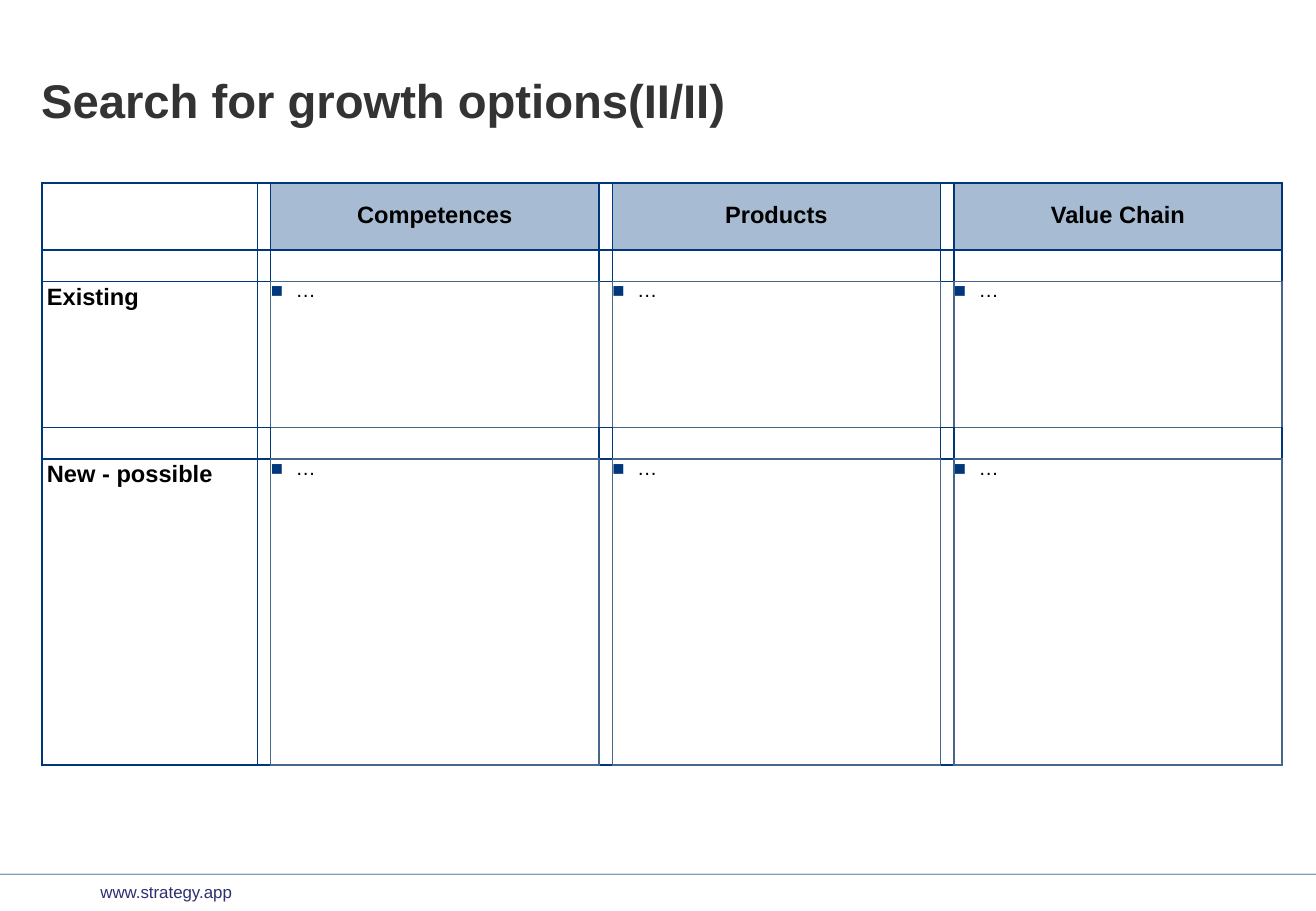
import pptx
import pptx.util
import pptx.dml.color
import pptx.enum.shapes
import pptx.enum.text
import pptx.oxml.ns
import lxml.etree

Cm, Pt = pptx.util.Cm, pptx.util.Pt
MIDDLE = pptx.enum.text.MSO_ANCHOR.MIDDLE
TOP = pptx.enum.text.MSO_ANCHOR.TOP
CENTER = pptx.enum.text.PP_ALIGN.CENTER
LEFT = pptx.enum.text.PP_ALIGN.LEFT

TITLE = "Search for growth options(II/II)"
SITE = "www.strategy.app"
HEADS = ["Competences", "Products", "Value Chain"]
ROWS = [("Existing", ["…", "…", "…"]), ("New - possible", ["…", "…", "…"])]
NAVY, SLATE, PALE = "00377A", "47688A", "A7BCD2"
WIDTHS = [4.5] + [0.28, 6.86] * len(HEADS)
HEIGHTS = [1.4, 0.66, 3.05, 0.66, 6.4]


def color(code):
    return pptx.dml.color.RGBColor.from_string(code)


def add(parent, tag, **attrs):
    node = lxml.etree.SubElement(parent, pptx.oxml.ns.qn(tag))
    for key, value in attrs.items():
        node.set(key, str(value))
    return node


def write(frame, text, size, code, bold=False, align=LEFT, space=None):
    frame.text = text
    para = frame.paragraphs[0]
    para.alignment = align
    para.line_spacing = space
    font = para.runs[0].font
    font.name, font.size, font.bold = "Arial", Pt(size), bold
    font.color.rgb = color(code)
    return para


def pad(box, size):
    box.margin_left = box.margin_right = Cm(size)
    box.margin_top = box.margin_bottom = Cm(size)


def bullet(para):
    props = para._p.get_or_add_pPr()
    props.set("marL", str(Cm(0.52)))
    props.set("indent", str(-Cm(0.52)))
    add(add(props, "a:buClr"), "a:srgbClr", val=NAVY)
    add(props, "a:buFont", typeface="Arial")
    add(props, "a:buChar", char="■")


def is_body(row, col):
    """Tell whether a cell holds bullets; these have slate edges."""
    return row in (2, 4) and col in (2, 4, 6)


def frame_cell(cell, row, col):
    """Draw the four edges of a cell."""
    props = cell._tc.get_or_add_tcPr()
    steps = {"L": (0, -1), "R": (0, 1), "T": (-1, 0), "B": (1, 0)}
    for side, (down, right) in steps.items():
        slate = is_body(row, col) or is_body(row + down, col + right)
        edge = add(props, "a:ln" + side, w=Pt(1))
        fill = add(edge, "a:solidFill")
        add(fill, "a:srgbClr", val=SLATE if slate else NAVY)


def add_title(slide):
    title = slide.shapes.title
    title.left, title.top = Cm(0.86), Cm(1.65)
    title.width, title.height = Cm(25.8), Cm(1.4)
    frame = title.text_frame
    pad(frame, 0)
    frame.vertical_anchor = TOP
    frame.word_wrap = True
    write(frame, TITLE, 28, "333333", True, space=0.88)


def add_footer(slide, wide):
    rule = slide.shapes.add_connector(
        pptx.enum.shapes.MSO_CONNECTOR.STRAIGHT, 0, Cm(18.28), wide, Cm(18.28))
    rule.line.color.rgb = color(NAVY)
    rule.line.width = Pt(0.75)
    tint = rule.line._ln.find(".//" + pptx.oxml.ns.qn("a:srgbClr"))
    add(tint, "a:alpha", val=47000)
    add(rule._element.spPr, "a:effectLst")
    box = slide.shapes.add_textbox(Cm(1.78), Cm(18.31), Cm(6.35), Cm(0.64))
    frame = box.text_frame
    frame.word_wrap = True
    pad(frame, 0.13)
    frame.margin_left = Cm(0.32)
    write(frame, SITE, 10, "2D306F")


def add_grid(slide):
    table = slide.shapes.add_table(
        len(HEIGHTS), len(WIDTHS), Cm(0.88), Cm(3.83),
        Cm(sum(WIDTHS)), Cm(sum(HEIGHTS))).table
    table.first_row = table.horz_banding = False
    for col, wide in zip(table.columns, WIDTHS):
        col.width = Cm(wide)
    for row, high in zip(table.rows, HEIGHTS):
        row.height = Cm(high)

    texts = {(0, 2 + 2 * i): head for i, head in enumerate(HEADS)}
    for i, (name, notes) in enumerate(ROWS):
        texts[2 + 2 * i, 0] = name
        for j, note in enumerate(notes):
            texts[2 + 2 * i, 2 + 2 * j] = note

    for r in range(len(HEIGHTS)):
        for c in range(len(WIDTHS)):
            cell = table.cell(r, c)
            frame_cell(cell, r, c)
            cell.fill.background()
            pad(cell, 0.1 if c == 0 else 0)
            text = texts.get((r, c))
            if text is None:
                add(cell.text_frame.paragraphs[0]._p, "a:endParaRPr", sz=800)
                continue
            body, head = is_body(r, c), r == 0
            para = write(cell.text_frame, text, 12 if body else 14, "000000",
                         not body, CENTER if head else LEFT, 0.9)
            if body:
                bullet(para)
            if head:
                cell.vertical_anchor = MIDDLE
                cell.fill.solid()
                cell.fill.fore_color.rgb = color(PALE)


def main():
    deck = pptx.Presentation()
    deck.slide_width, deck.slide_height = Cm(27.51), Cm(19.05)
    slide = deck.slides.add_slide(deck.slide_layouts[5])
    add_footer(slide, deck.slide_width)
    add_title(slide)
    add_grid(slide)
    deck.save("out.pptx")


if __name__ == "__main__":
    main()
